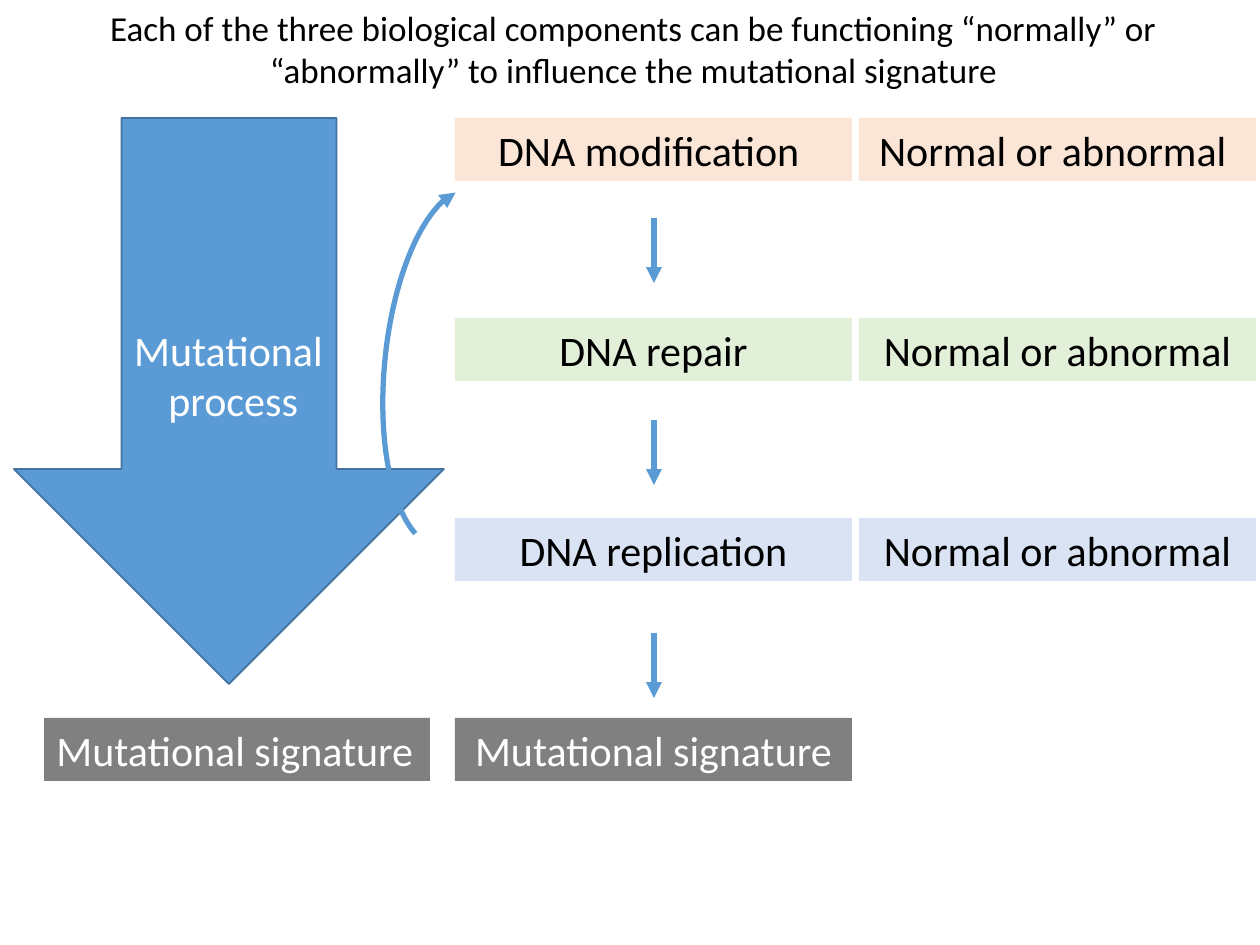
from lxml import etree
from pptx import Presentation
from pptx.dml.color import RGBColor
from pptx.enum.shapes import MSO_CONNECTOR, MSO_SHAPE
from pptx.enum.text import MSO_ANCHOR, MSO_AUTO_SIZE, PP_ALIGN
from pptx.oxml.ns import qn
from pptx.util import Emu, Pt

RECTANGLE, DOWN_ARROW, ARC = MSO_SHAPE.RECTANGLE, MSO_SHAPE.DOWN_ARROW, MSO_SHAPE.ARC
STRAIGHT = MSO_CONNECTOR.STRAIGHT
LEFT, CENTER = PP_ALIGN.LEFT, PP_ALIGN.CENTER
TOP = MSO_ANCHOR.TOP
GROW = MSO_AUTO_SIZE.SHAPE_TO_FIT_TEXT

EMU_PER_PX = 914400 / 126
FONT = "Calibri"
COLORS = {
    "black": "000000",
    "white": "FFFFFF",
    "blue": "5B9BD5",
    "blue_edge": "43739E",
    "modification": "FBE5D6",
    "repair": "E2F0D9",
    "replication": "DAE3F3",
    "signature": "808080",
}

ROW_TOP, ROW_STEP, ROW_HEIGHT = 118, 200, 63
STEP_LEFT, STATE_LEFT, COLUMN_WIDTH = 455, 859, 397
FLOW_ARROW_TOPS, FLOW_ARROW_LENGTH = (218, 420, 633), 65
STEPS = [
    ("DNA modification ", "Normal or abnormal ", "modification"),
    ("DNA repair", "Normal or abnormal", "repair"),
    ("DNA replication", "Normal or abnormal", "replication"),
]


def px(*lengths):
    return [Emu(round(length * EMU_PER_PX)) for length in lengths]


def rgb(name):
    return RGBColor.from_string(COLORS[name])


def write(frame, lines, color, size=24, align=CENTER, wrap=True):
    frame.word_wrap = wrap
    frame.auto_size = GROW
    frame.vertical_anchor = TOP
    for index, line in enumerate(lines):
        paragraph = frame.paragraphs[0] if index == 0 else frame.add_paragraph()
        paragraph.text = line
        paragraph.alignment = align
        paragraph.font.name = FONT
        paragraph.font.size = Pt(size)
        paragraph.font.color.rgb = rgb(color)


def add_label(slide, box, text, fill, color="black", **text_options):
    label = slide.shapes.add_shape(RECTANGLE, *px(*box))
    label.shadow.inherit = False
    label.fill.solid()
    label.fill.fore_color.rgb = rgb(fill)
    label.line.fill.background()
    write(label.text_frame, [text], color, **text_options)


def style_arrow_line(line):
    line.color.rgb = rgb("blue")
    line.width = Pt(3)
    etree.SubElement(line._get_or_add_ln(), qn("a:tailEnd"), type="triangle")


def add_flow_arrow(slide, x, top):
    arrow = slide.shapes.add_connector(STRAIGHT, *px(x, top, x, top + FLOW_ARROW_LENGTH))
    style_arrow_line(arrow.line)
    etree.SubElement(arrow._element.spPr, qn("a:effectLst"))


def add_process_arrow(slide):
    process = slide.shapes.add_shape(DOWN_ARROW, *px(14, 118, 430, 566))
    process.shadow.inherit = False
    process.fill.solid()
    process.fill.fore_color.rgb = rgb("blue")
    process.line.color.rgb = rgb("blue_edge")
    process.line.width = Pt(1)
    caption = slide.shapes.add_textbox(*px(121, 318, 215, 115))
    write(caption.text_frame, ["Mutational", " process"], "white", wrap=False)


def add_feedback_arc(slide):
    """Curved arrow from replication back up to modification."""
    feedback = slide.shapes.add_shape(ARC, *px(276, 297, 359, 142))
    feedback.adjustments[0] = 112.94
    feedback.adjustments[1] = 212.79
    feedback.rotation = 275.4
    feedback.fill.background()
    style_arrow_line(feedback.line)
    feedback.shadow.inherit = False


def add_title(slide, text):
    title = slide.shapes.title
    title.left, title.top, title.width, title.height = px(39, 0, 1189, 97)
    write(title.text_frame, [text], "black", size=20)
    title.text_frame.paragraphs[0].line_spacing = 1.0


def main():
    presentation = Presentation()
    presentation.slide_width, presentation.slide_height = px(1260, 945)
    slide = presentation.slides.add_slide(presentation.slide_layouts[5])

    for row, (step, state, fill) in enumerate(STEPS):
        top = ROW_TOP + row * ROW_STEP
        for left, text in ((STEP_LEFT, step), (STATE_LEFT, state)):
            add_label(slide, (left, top, COLUMN_WIDTH, ROW_HEIGHT), text, fill)
    for top in FLOW_ARROW_TOPS:
        add_flow_arrow(slide, STEP_LEFT + COLUMN_WIDTH // 2 + 1, top)

    add_process_arrow(slide)
    signature_top = ROW_TOP + len(STEPS) * ROW_STEP
    add_label(slide, (STEP_LEFT, signature_top, COLUMN_WIDTH, ROW_HEIGHT),
              "Mutational signature", "signature", "white")
    add_label(slide, (44, signature_top, 386, ROW_HEIGHT),
              "Mutational signature", "signature", "white", align=LEFT, wrap=False)

    add_title(slide, "Each of the three biological components can be functioning "
                     "“normally” or “abnormally” to influence the mutational signature")
    add_feedback_arc(slide)
    presentation.save("out.pptx")


if __name__ == "__main__":
    main()
